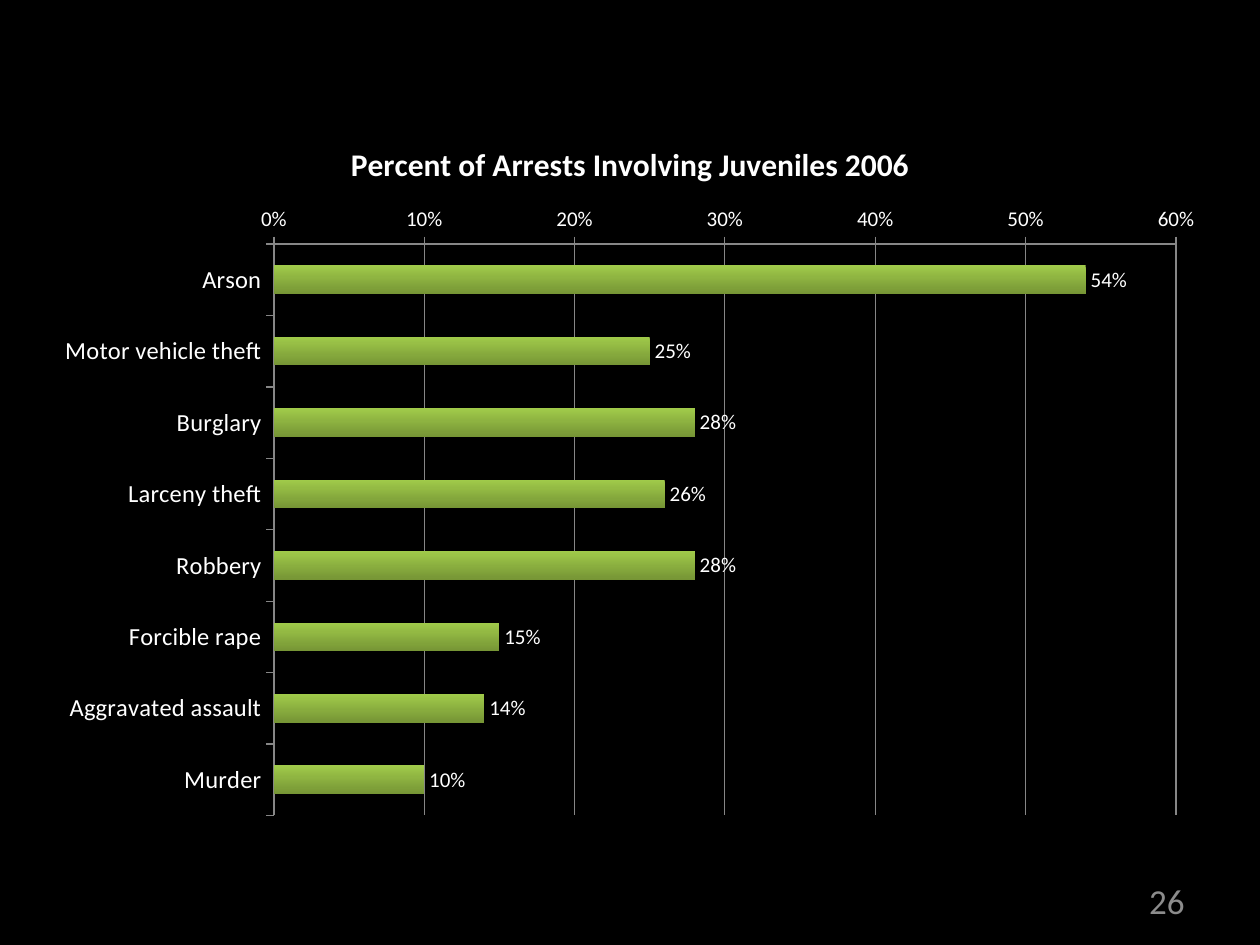
"""Build a slide with a bar chart of juvenile arrest shares by offence."""
from dataclasses import dataclass
from typing import Any

import lxml.etree
import pptx
import pptx.chart.data
import pptx.dml.color
import pptx.enum.chart
import pptx.enum.text
import pptx.oxml.ns
import pptx.util

Cm = pptx.util.Cm
Pt = pptx.util.Pt
FACE = "Calibri"
WHITE = "FFFFFF"
GRAY = "868686"


@dataclass
class Crime:
    name: str
    share: float


@dataclass
class Scale:
    axis: Any
    size: int


CRIMES = [
    Crime("Arson", 0.54),
    Crime("Motor vehicle theft", 0.25),
    Crime("Burglary", 0.28),
    Crime("Larceny theft", 0.26),
    Crime("Robbery", 0.28),
    Crime("Forcible rape", 0.15),
    Crime("Aggravated assault", 0.14),
    Crime("Murder", 0.10),
]
PLOT = {"x": 0.197, "y": 0.18, "w": 0.767, "h": 0.8}


def paint(color: Any, code: str) -> None:
    color.rgb = pptx.dml.color.RGBColor.from_string(code)


def style(font: Any, size: int, code: str, bold: bool = False) -> None:
    font.name, font.size, font.bold = FACE, Pt(size), bold
    paint(font.color, code)


def write(frame: Any, text: str, size: int, code: str, bold: bool = False) -> None:
    run = frame.paragraphs[0].add_run()
    run.text = text
    style(run.font, size, code, bold)


def rule(form: Any) -> None:
    paint(form.line.color, GRAY)
    form.line.width = Pt(0.75)


def dress(scale: Scale) -> None:
    axis = scale.axis
    style(axis.tick_labels.font, scale.size, WHITE)
    rule(axis.format)
    axis.major_tick_mark = pptx.enum.chart.XL_TICK_MARK.OUTSIDE


def place(chart: Any) -> None:
    qn = pptx.oxml.ns.qn
    area = chart.plots[0]._element.getparent()
    for old in area.findall(qn("c:layout")):
        area.remove(old)
    layout = lxml.etree.Element(qn("c:layout"))
    area.insert(0, layout)
    manual = lxml.etree.SubElement(layout, qn("c:manualLayout"))
    parts = {"layoutTarget": "inner", "xMode": "edge", "yMode": "edge", **PLOT}
    for tag, val in parts.items():
        lxml.etree.SubElement(manual, qn(f"c:{tag}"), val=str(val))


def draw(slide: Any) -> None:
    data = pptx.chart.data.CategoryChartData(number_format="0%")
    data.categories = [crime.name for crime in CRIMES]
    data.add_series("Series 1", [crime.share for crime in CRIMES])
    chart = slide.shapes.add_chart(
        pptx.enum.chart.XL_CHART_TYPE.BAR_CLUSTERED,
        Cm(0.85), Cm(2.33), Cm(23.71), Cm(14.4), data).chart
    chart.has_legend = False
    style(chart.font, 10, WHITE)
    chart.has_title = True
    write(chart.chart_title.text_frame,
          "Percent of Arrests Involving Juveniles 2006", 18, WHITE, True)
    chart.chart_title.include_in_layout = False

    for scale in (Scale(chart.category_axis, 14), Scale(chart.value_axis, 12)):
        dress(scale)
    chart.category_axis.reverse_order = True
    axis = chart.value_axis
    axis.minimum_scale, axis.maximum_scale, axis.major_unit = 0, 0.6, 0.1
    axis.has_major_gridlines = True
    rule(axis.major_gridlines.format)
    axis.tick_labels.number_format = "0%"
    axis.tick_labels.number_format_is_linked = False

    plot = chart.plots[0]
    plot.gap_width = 150
    plot.vary_by_categories = False
    fill = plot.series[0].format.fill
    fill.gradient()
    fill.gradient_angle = 270
    for stop, code in zip(fill.gradient_stops, ("A0CA4A", "769535")):
        paint(stop.color, code)
    labels = plot.series[0].data_labels
    labels.show_value = True
    labels.number_format = "0%"
    labels.number_format_is_linked = False
    labels.position = pptx.enum.chart.XL_LABEL_POSITION.OUTSIDE_END
    style(labels.font, 12, WHITE)
    place(chart)


def number(slide: Any, text: str) -> None:
    box = slide.shapes.add_textbox(Cm(18.2), Cm(17.65), Cm(5.93), Cm(1.01))
    frame = box.text_frame
    frame.word_wrap = True
    frame.vertical_anchor = pptx.enum.text.MSO_ANCHOR.MIDDLE
    frame.paragraphs[0].alignment = pptx.enum.text.PP_ALIGN.RIGHT
    write(frame, text, 20, "8C8C8C")


def main() -> None:
    deck = pptx.Presentation()
    deck.slide_width, deck.slide_height = Cm(25.4), Cm(19.05)
    slide = deck.slides.add_slide(deck.slide_layouts[6])
    back = slide.background.fill
    back.solid()
    paint(back.fore_color, "000000")
    draw(slide)
    number(slide, "26")
    deck.save("out.pptx")


if __name__ == "__main__":
    main()
